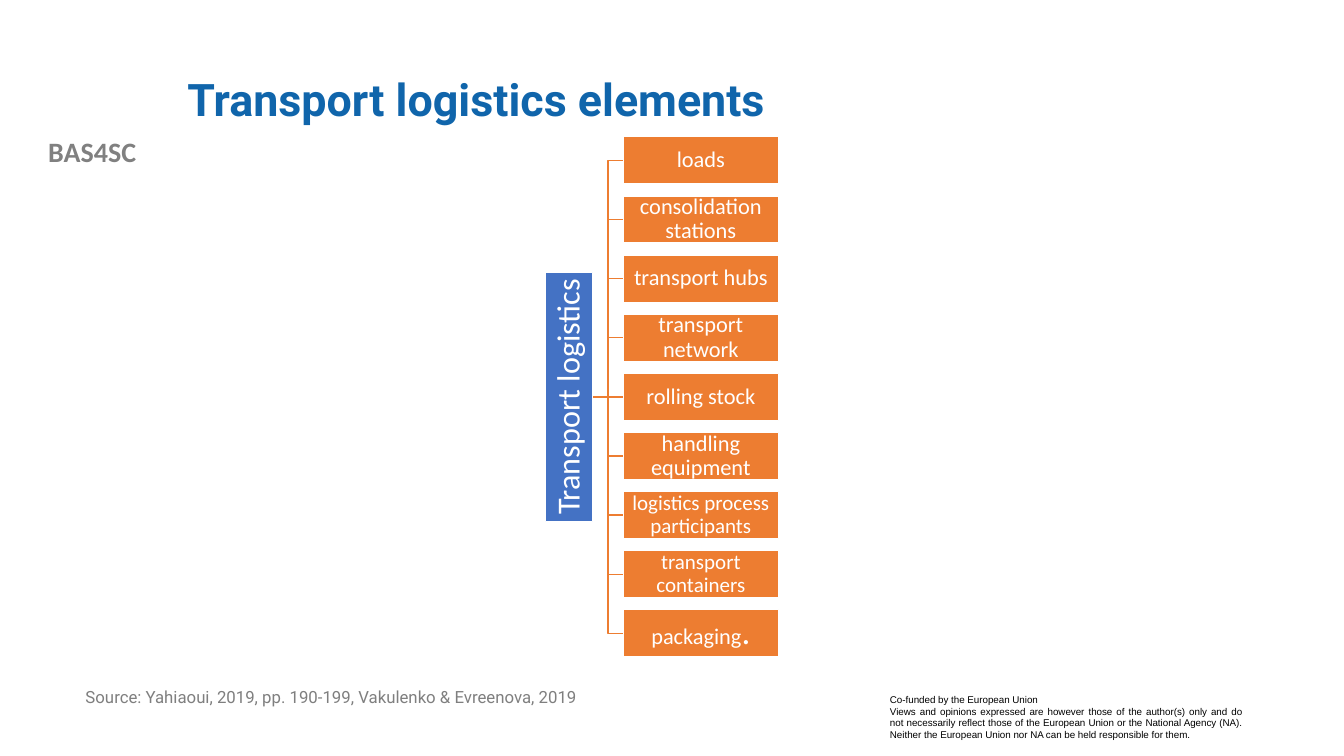
from pptx import Presentation
from pptx.dml.color import RGBColor
from pptx.enum.shapes import MSO_CONNECTOR, MSO_SHAPE
from pptx.enum.text import MSO_ANCHOR, PP_ALIGN
from pptx.util import Pt
from lxml.etree import SubElement
from pptx.oxml.ns import qn

HUES = {"title": "1065AB", "grey": "808080", "source": "7F7F7F", "root": "4472C4",
        "item": "ED7D31", "white": "FFFFFF", "black": "000000"}
ITEMS = [("loads", 16), ("consolidation stations", 16), ("transport hubs", 16),
         ("transport network", 16), ("rolling stock", 16), ("handling equipment", 16),
         ("logistics process participants", 15), ("transport containers", 15),
         ("packaging", 16)]
NOTICE = ("Co-funded by the European Union\n"
          "Views and opinions expressed are however those of the author(s) only and do not "
          "necessarily reflect those of the European Union or the National Agency (NA). "
          "Neither the European Union nor NA can be held responsible for them.")


def tint(name):
    """Return the named colour."""
    return RGBColor.from_string(HUES[name])


def style(font, size, hue, face="Calibri", bold=False):
    """Set size, colour, face and weight of a font."""
    font.size, font.name, font.bold = Pt(size), face, bold
    font.color.rgb = tint(hue)


def write(shape, text, size, hue, face="Calibri", bold=False, align=PP_ALIGN.LEFT,
          space=1.0, anchor=MSO_ANCHOR.TOP):
    """Fill a shape with formatted text."""
    frame = shape.text_frame
    frame.word_wrap = True
    frame.vertical_anchor = anchor
    frame.text = text
    for para in frame.paragraphs:
        para.alignment, para.line_spacing = align, space
        for run in para.runs:
            style(run.font, size, hue, face, bold)


def label(slide, box, text, size, hue, **look):
    """Place a text box."""
    shape = slide.shapes.add_textbox(*map(Pt, box))
    write(shape, text, size, hue, **look)


def block(slide, box, hue, text, size, inset):
    """Place a filled rectangle with centred white text."""
    shape = slide.shapes.add_shape(MSO_SHAPE.RECTANGLE, *map(Pt, box))
    shape.shadow.inherit = False
    shape.fill.solid()
    shape.fill.fore_color.rgb = tint(hue)
    shape.line.color.rgb = tint("white")
    shape.line.width = Pt(1)
    frame = shape.text_frame
    frame.margin_left = frame.margin_right = Pt(inset)
    frame.margin_top = frame.margin_bottom = Pt(inset)
    write(shape, text, size, "white", align=PP_ALIGN.CENTER, space=0.9,
          anchor=MSO_ANCHOR.MIDDLE)
    return shape


def branch(slide, x, y, item):
    """Join a point to the left side of an item."""
    line = slide.shapes.add_connector(MSO_CONNECTOR.ELBOW, Pt(x), Pt(y), item.left,
                                      item.top + item.height // 2)
    line.end_connect(item, 1)
    line.line.color.rgb = tint("item")
    line.line.width = Pt(1)
    SubElement(line._element.spPr, qn("a:effectLst"))


def tree(slide, box):
    """Draw the root and its column of items within a box."""
    left, top, width, height = box
    thick, long, wide = 33.8, 178, 111.2
    step = (height - thick) / (len(ITEMS) - 1)
    mid = top + height / 2
    for i, (text, size) in enumerate(ITEMS):
        place = (left + width - wide, top + i * step, wide, thick)
        item = block(slide, place, "item", text, size, 0.8)
        branch(slide, left + thick, mid, item)
    stop = item.text_frame.paragraphs[0].add_run()
    stop.text = "."
    style(stop.font, 25, "white")
    place = (left + (thick - long) / 2, mid - thick / 2, long, thick)
    root = block(slide, place, "root", "Transport logistics", 23, 1.2)
    root.rotation = 270


def notice(slide, box):
    """Place the funding notice on white."""
    shape = slide.shapes.add_shape(MSO_SHAPE.RECTANGLE, *map(Pt, box))
    shape.shadow.inherit = False
    shape.fill.solid()
    shape.fill.fore_color.rgb = tint("white")
    shape.line.fill.background()
    write(shape, NOTICE, 7, "black", face="Arial", align=PP_ALIGN.JUSTIFY)


def main():
    """Build and save the slide."""
    deck = Presentation()
    deck.slide_width, deck.slide_height = Pt(960), Pt(540)
    slide = deck.slides.add_slide(deck.slide_layouts[6])
    label(slide, (0, 92.2, 131.8, 31.7), "BAS4SC", 20, "grey", bold=True,
          align=PP_ALIGN.CENTER)
    notice(slide, (628.6, 491.8, 265.7, 41))
    label(slide, (126.7, 28.8, 767.5, 87.8), "Transport logistics elements", 32, "title",
          face="Roboto", bold=True, space=0.9, anchor=MSO_ANCHOR.MIDDLE)
    label(slide, (54, 488.9, 403.2, 37.4),
          "Source: Yahiaoui, 2019, pp. 190-199, Vakulenko & Evreenova, 2019", 12, "source",
          face="Roboto", space=0.9)
    tree(slide, (389.6, 97.7, 166.6, 371.6))
    deck.save("out.pptx")


if __name__ == "__main__":
    main()
